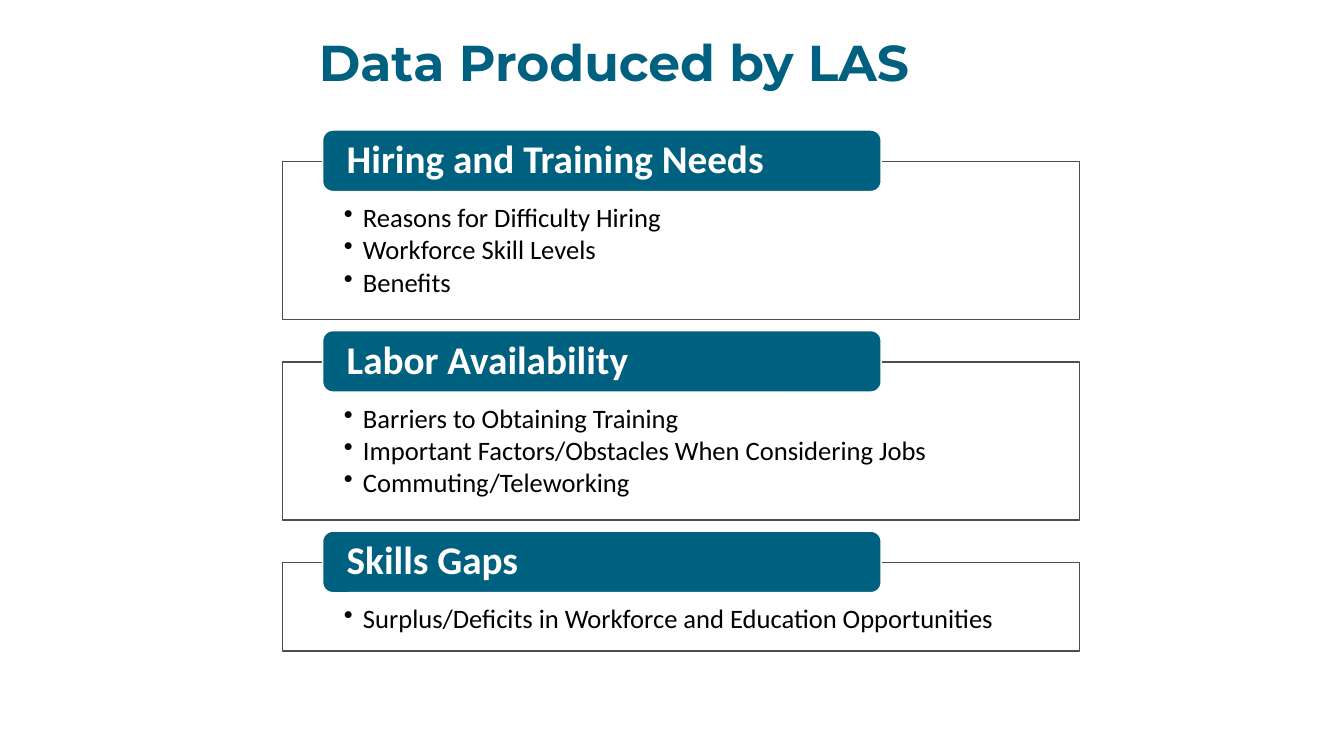
from dataclasses import dataclass

from lxml import etree
from pptx import Presentation
from pptx.dml.color import RGBColor
from pptx.enum import shapes, text
from pptx.oxml import ns
from pptx.util import Inches, Pt


@dataclass(frozen=True)
class Theme:
    teal: RGBColor = RGBColor(0x00, 0x60, 0x7F)
    gray: RGBColor = RGBColor(0x4D, 0x4D, 0x4F)
    white: RGBColor = RGBColor(0xFF, 0xFF, 0xFF)
    black: RGBColor = RGBColor(0x00, 0x00, 0x00)
    title: int = 36
    head: int = 28
    body: int = 19
    brand: str = "Montserrat"
    font: str = "Calibri"


THEME = Theme()

# Heading, panel height, bullet lines
GROUPS = [
    ("Hiring and Training Needs", 1.57,
     ["Reasons for Difficulty Hiring", "Workforce Skill Levels", "Benefits"]),
    ("Labor Availability", 1.57,
     ["Barriers to Obtaining Training",
      "Important Factors/Obstacles When Considering Jobs",
      "Commuting/Teleworking"]),
    ("Skills Gaps", 0.88,
     ["Surplus/Deficits in Workforce and Education Opportunities"]),
]
TOP, GAP, RISE = 1.6, 0.42, 0.31


def add_run(para, words, size, color, font, bold=False):
    run = para.add_run()
    run.text = words
    run.font.size = Pt(size)
    run.font.name = font
    run.font.bold = bold
    run.font.color.rgb = color


def add_bullet(para):
    props = para._p.get_or_add_pPr()
    props.set("marL", str(Inches(0.19)))
    props.set("indent", str(Inches(-0.19)))
    etree.SubElement(props, ns.qn("a:buChar")).set("char", "•")


def add_block(slide, kind, box, fill, line, inset, anchor):
    shape = slide.shapes.add_shape(kind, *map(Inches, box))
    shape.shadow.inherit = False
    shape.fill.solid()
    shape.fill.fore_color.rgb = fill
    shape.line.color.rgb = line
    shape.line.width = Pt(1)
    frame = shape.text_frame
    frame.word_wrap = True
    frame.vertical_anchor = anchor
    side, top, base = map(Inches, inset)
    frame.margin_left = frame.margin_right = side
    frame.margin_top, frame.margin_bottom = top, base
    return frame


def add_title(slide, words):
    box = slide.shapes.add_textbox(*map(Inches, (1.29, 0.26, 9.6, 1.45)))
    box.text_frame.word_wrap = True
    para = box.text_frame.paragraphs[0]
    para.alignment = text.PP_ALIGN.CENTER
    add_run(para, words, THEME.title, THEME.teal, THEME.brand, True)


def add_panel(slide, top, height, items):
    frame = add_block(slide, shapes.MSO_SHAPE.RECTANGLE,
                      (2.8, top, 7.91, height), THEME.white, THEME.gray,
                      (0.61, 0.43, 0.15), text.MSO_ANCHOR.TOP)
    for i, item in enumerate(items):
        para = frame.add_paragraph() if i else frame.paragraphs[0]
        add_bullet(para)
        para.level = 1
        para.alignment = text.PP_ALIGN.LEFT
        para.line_spacing = 0.9
        para.space_after = Pt(2.5)
        add_run(para, item, THEME.body, THEME.black, THEME.font)


def add_head(slide, top, words):
    frame = add_block(slide, shapes.MSO_SHAPE.ROUNDED_RECTANGLE,
                      (3.2, top, 5.54, 0.61), THEME.teal, THEME.white,
                      (0.21, 0, 0), text.MSO_ANCHOR.MIDDLE)
    para = frame.paragraphs[0]
    para.alignment = text.PP_ALIGN.LEFT
    para.line_spacing = 0.9
    add_run(para, words, THEME.head, THEME.white, THEME.font, True)


def main():
    deck = Presentation()
    deck.slide_width, deck.slide_height = Inches(13.33), Inches(7.5)
    slide = deck.slides.add_slide(deck.slide_layouts[6])

    add_title(slide, "Data Produced by LAS")

    # Stacked panels, each with a heading over its top edge
    top = TOP
    for head, height, items in GROUPS:
        add_panel(slide, top, height, items)
        add_head(slide, top - RISE, head)
        top += height + GAP

    deck.save("out.pptx")


if __name__ == "__main__":
    main()
